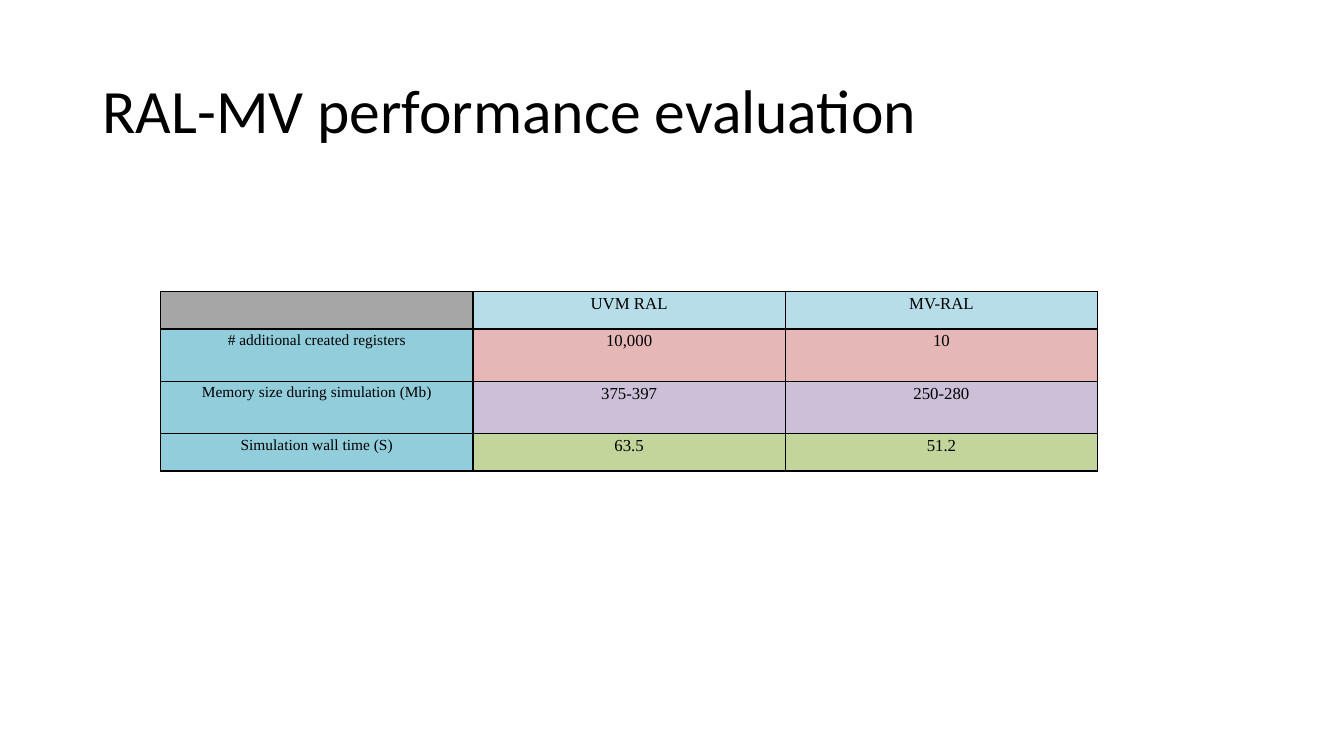
from lxml import etree
from pptx import Presentation
from pptx.dml.color import RGBColor
from pptx.enum.text import MSO_ANCHOR, PP_ALIGN
from pptx.oxml.ns import qn
from pptx.util import Cm, Pt

LEFT, CENTER = PP_ALIGN.LEFT, PP_ALIGN.CENTER
MIDDLE = MSO_ANCHOR.MIDDLE

BLACK = "000000"
HEADER_FILLS = ["A6A6A6", "B6DDE8", "B6DDE8"]
LABEL_FILL = "92CDDC"
VALUE_FILLS = ["E5B8B7", "CCC0D9", "C2D69B"]

RESULTS = [
    ["", "UVM RAL", "MV-RAL"],
    ["# additional created registers", "10,000", "10"],
    ["Memory size during simulation (Mb)", "375-397", "250-280"],
    ["Simulation wall time (S)", "63.5", "51.2"],
]
FILLS = [HEADER_FILLS] + [[LABEL_FILL, fill, fill] for fill in VALUE_FILLS]
ROW_HEIGHTS = [0.94, 1.32, 1.32, 0.94]
COLUMN_WIDTH = 7.87


def color(hex_string):
    return RGBColor.from_string(hex_string)


def write(frame, text, *, font, size, align=LEFT, spacing=1.0):
    para = frame.paragraphs[0]
    para.alignment = align
    para.line_spacing = spacing
    span = para.add_run()
    span.text = text
    span.font.name = font
    span.font.size = Pt(size)
    span.font.color.rgb = color(BLACK)


class Page:
    def __init__(self, deck):
        self.slide = deck.slides.add_slide(deck.slide_layouts[6])
        self.title_font = "Calibri"
        self.table_font = "Times New Roman"

    def title(self, text, left, top, width, height):
        box = self.slide.shapes.add_textbox(Cm(left), Cm(top), Cm(width), Cm(height))
        box.text_frame.word_wrap = True
        box.text_frame.vertical_anchor = MIDDLE
        write(box.text_frame, text, font=self.title_font, size=44, spacing=0.9)

    def table(self, rows, fills, left, top):
        columns = len(rows[0])
        table = self.slide.shapes.add_table(
            len(rows), columns, Cm(left), Cm(top),
            Cm(columns * COLUMN_WIDTH), Cm(sum(ROW_HEIGHTS))).table
        for column in table.columns:
            column.width = Cm(COLUMN_WIDTH)
        for row, height in zip(table.rows, ROW_HEIGHTS):
            row.height = Cm(height)
        for i, texts in enumerate(rows):
            for j, text in enumerate(texts):
                self.cell(table.cell(i, j), text, fills[i][j], 12 if j else 11)

    def cell(self, cell, text, fill, size):
        cell.margin_left = cell.margin_right = Cm(0.13)
        cell.margin_top = cell.margin_bottom = 0
        self.borders(cell)
        cell.fill.solid()
        cell.fill.fore_color.rgb = color(fill)
        if text:
            write(cell.text_frame, text, font=self.table_font, size=size,
                  align=CENTER, spacing=1.15)

    def borders(self, cell):
        properties = cell._tc.get_or_add_tcPr()
        for side in ("a:lnL", "a:lnR", "a:lnT", "a:lnB"):
            line = etree.SubElement(properties, qn(side), w=str(Pt(1)))
            solid = etree.SubElement(line, qn("a:solidFill"))
            etree.SubElement(solid, qn("a:srgbClr"), val=BLACK)


def main():
    deck = Presentation()
    deck.slide_width, deck.slide_height = Cm(33.87), Cm(19.05)
    page = Page(deck)

    # Heading
    page.title("RAL-MV performance evaluation", 2.33, 1.01, 29.21, 3.68)

    # Comparison of the two register models
    page.table(RESULTS, FILLS, 4.05, 7.35)

    deck.save("out.pptx")


if __name__ == "__main__":
    main()
